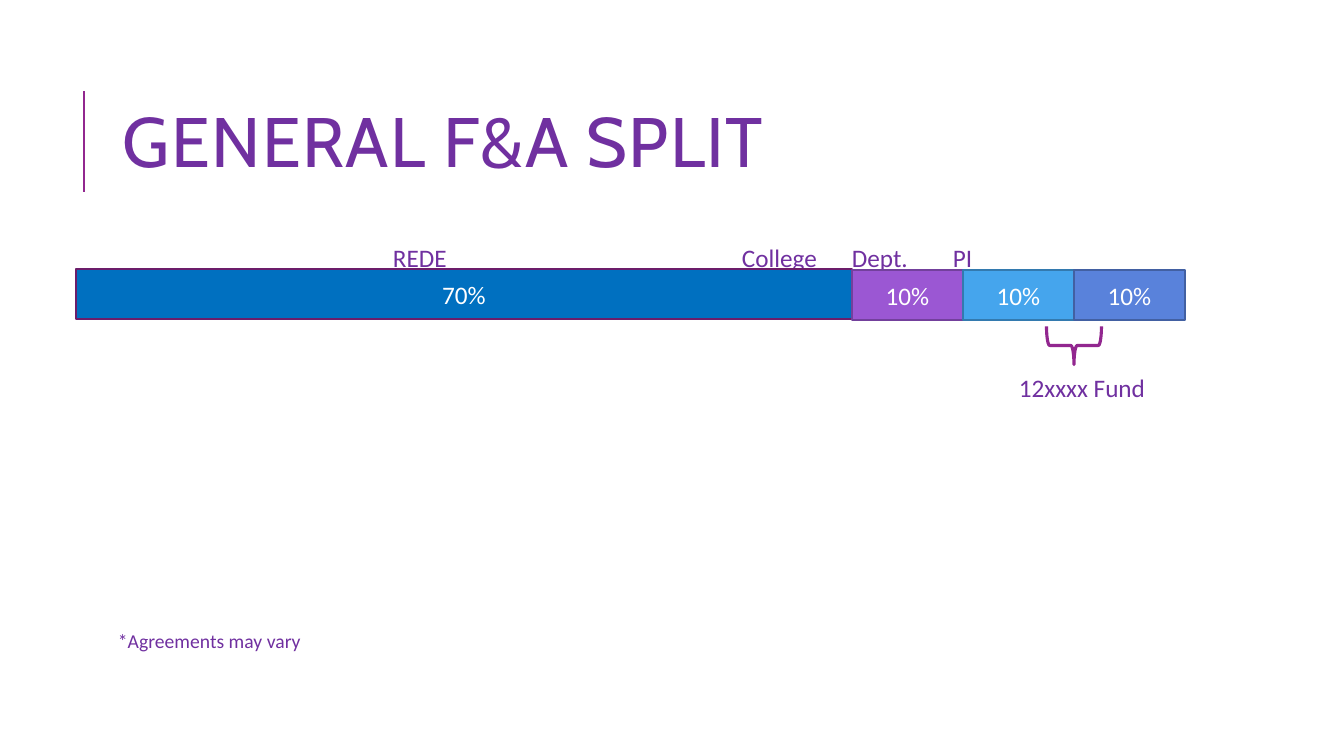
from pptx import Presentation
from pptx.dml.color import RGBColor
from pptx.enum.shapes import MSO_CONNECTOR, MSO_SHAPE
from pptx.enum.text import MSO_ANCHOR, PP_ALIGN
from pptx.oxml.ns import qn
from pptx.util import Emu, Pt
from lxml import etree

RECT, BRACE = MSO_SHAPE.RECTANGLE, MSO_SHAPE.RIGHT_BRACE
STRAIGHT = MSO_CONNECTOR.STRAIGHT
MIDDLE = MSO_ANCHOR.MIDDLE
LEFT, CENTER = PP_ALIGN.LEFT, PP_ALIGN.CENTER
PX = 914400 / 100.8
PURPLE, MAGENTA, WHITE = "7030A0", "92278F", "FFFFFF"


def rgb(value):
    return RGBColor.from_string(value)


def write(sp, text, size=18, font="Calibri", color=PURPLE, align=LEFT,
          line_spacing=None, tracking=None):
    tf = sp.text_frame
    tf.word_wrap = True
    tf.vertical_anchor = MIDDLE
    tf.margin_left = tf.margin_right = tf.margin_top = tf.margin_bottom = 0
    p = tf.paragraphs[0]
    p.alignment = align
    if line_spacing:
        p.line_spacing = line_spacing
    r = p.add_run()
    r.text = text
    r.font.size = Pt(size)
    r.font.name = font
    r.font.color.rgb = rgb(color)
    if tracking:
        r.font._element.set("spc", str(tracking))


prs = Presentation()
prs.slide_width, prs.slide_height = Emu(12192000), Emu(6858000)
s = prs.slides.add_slide(prs.slide_layouts[6])

# Accent line beside the title
accent = s.shapes.add_connector(
    STRAIGHT, *[Emu(round(v * PX)) for v in (84, 192, 84, 91)])
accent.line.color.rgb = rgb(MAGENTA)
accent.line.width = Pt(1.5)
etree.SubElement(accent._element.spPr, qn("a:effectLst"))

# Title, share names, fund name and footnote
texts = [
    ("GENERAL F&A SPLIT", 123, 65, 1052, 165,
     dict(size=50, font="Cabin", line_spacing=0.8, tracking=100)),
    ("REDE", 393, 237, 90, 40, {}),
    ("College", 742, 237, 100, 40, {}),
    ("Dept.", 852, 237, 90, 40, {}),
    ("PI", 953, 237, 60, 40, {}),
    ("12xxxx Fund", 987, 367, 190, 40, dict(align=CENTER)),
    ("*Agreements may vary", 118, 626, 400, 30, dict(size=14)),
]
for text, x, y, w, h, fmt in texts:
    tb = s.shapes.add_textbox(*[Emu(round(v * PX)) for v in (x, y, w, h)])
    write(tb, text, **fmt)

# Split bar: each segment starts where the one before it ends
segments = [
    ("70%", 269, 776, "0070C0", "6C1D6A"),
    ("10%", 270, 111, "9B57D3", "73409C"),
    ("10%", 270, 111, "45A5ED", "337AAF"),
    ("10%", 270, 111, "5982DB", "4260A2"),
]
x = 76
for share, y, w, fill, edge in segments:
    sp = s.shapes.add_shape(RECT, *[Emu(round(v * PX)) for v in (x, y, w, 50)])
    sp.shadow.inherit = False
    sp.fill.solid()
    sp.fill.fore_color.rgb = rgb(fill)
    sp.line.color.rgb = rgb(edge)
    sp.line.width = Pt(1.25)
    write(sp, share, color=WHITE, align=CENTER)
    x += w

# Brace under the last two shares
brace = s.shapes.add_shape(
    BRACE, *[Emu(round(v * PX)) for v in (1055, 318, 38, 55)])
brace.rotation = 90
brace.shadow.inherit = False
brace.fill.background()
brace.line.color.rgb = rgb(MAGENTA)
brace.line.width = Pt(2.25)

prs.save("out.pptx")
